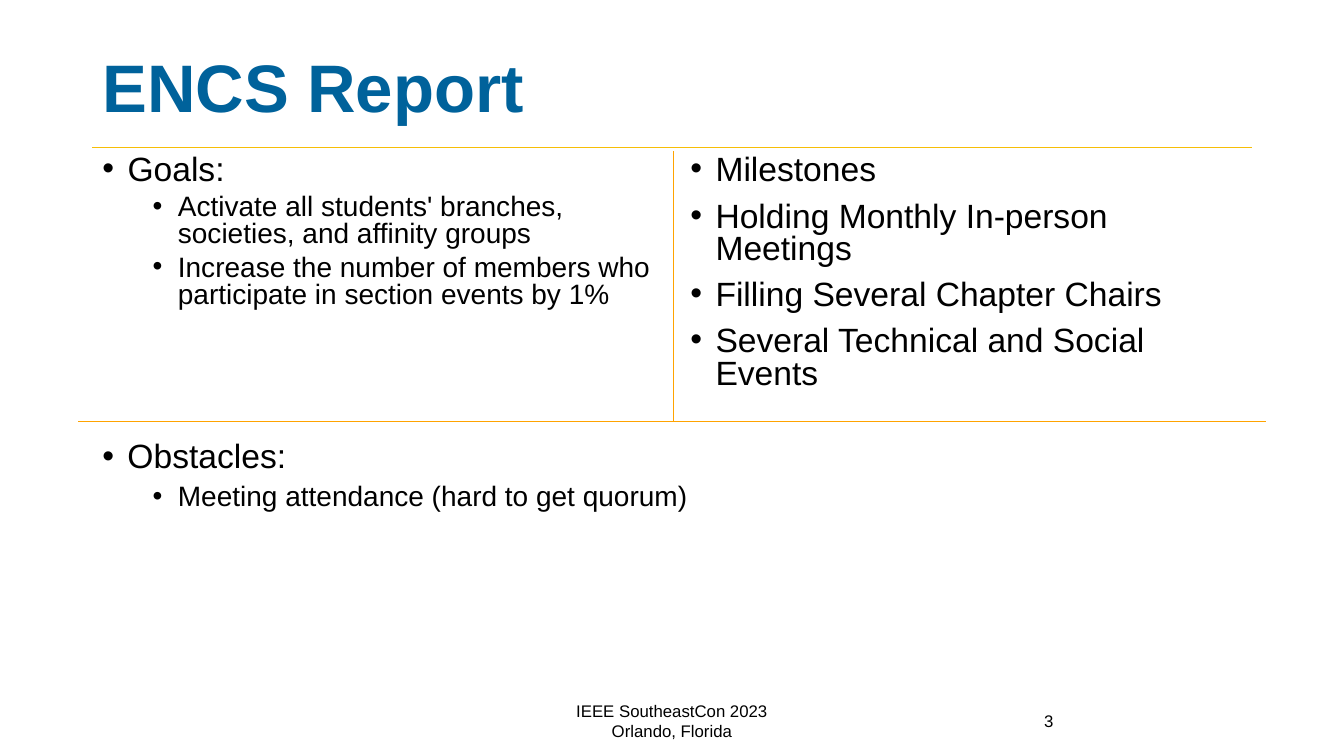
import pptx
import pptx.dml.color
import pptx.enum.shapes
import pptx.enum.text
import pptx.util
import lxml.etree

Pt = pptx.util.Pt
RGBColor = pptx.dml.color.RGBColor
ANCHOR = pptx.enum.text.MSO_ANCHOR
ALIGN = pptx.enum.text.PP_ALIGN
BLUE = RGBColor(0x00, 0x62, 0x9B)
BLACK = RGBColor(0x00, 0x00, 0x00)
YELLOW = RGBColor(0xF6, 0xBE, 0x07)
ORANGE = RGBColor(0xFF, 0xA3, 0x00)
DRAWING = "{http://schemas.openxmlformats.org/drawingml/2006/main}"

LEFT = 66
CONTENT_WIDTH = 828
COLUMN_WIDTH = 408
COLUMN_TOP = 108
FOOTER_TOP = 500.4
DIVIDER_X = 481
DIVIDER_Y = 301

presentation = pptx.Presentation()
presentation.slide_width = Pt(960)
presentation.slide_height = Pt(540)
slide = presentation.slides.add_slide(presentation.slide_layouts[6])


def add_text(left, top, width, height, anchor, lines, size, color=BLACK, bold=False, **layout):
    frame = slide.shapes.add_textbox(Pt(left), Pt(top), Pt(width), Pt(height)).text_frame
    frame.word_wrap = True
    frame.vertical_anchor = anchor
    for index, line in enumerate(lines):
        paragraph = frame.paragraphs[0] if index == 0 else frame.add_paragraph()
        paragraph.text = line
        for name, value in layout.items():
            setattr(paragraph, name, value)
        for name, value in {"name": "Arial", "size": Pt(size), "bold": bold}.items():
            setattr(paragraph.runs[0].font, name, value)
        paragraph.runs[0].font.color.rgb = color
    return frame


def add_bullets(left, top, width, height, spacing, items):
    lines = [text for level, text in items]
    frame = add_text(left, top, width, height, ANCHOR.TOP, lines, 24, line_spacing=spacing)
    for index, (level, text) in enumerate(items):
        paragraph = frame.paragraphs[index]
        paragraph.level = level
        if index:
            paragraph.space_before = Pt(5 if level else 10)
        properties = paragraph._p.get_or_add_pPr()
        properties.set("marL", str(Pt(54 if level else 18)))
        properties.set("indent", str(Pt(-18)))
        lxml.etree.SubElement(properties, DRAWING + "buFont", typeface="Arial")
        lxml.etree.SubElement(properties, DRAWING + "buChar", char="•")
        paragraph.runs[0].font.size = Pt(20 if level else 24)


add_text(LEFT, 28.8, 738.72, 72, ANCHOR.MIDDLE, ["ENCS Report"], 48, BLUE, True, line_spacing=0.9)

add_bullets(LEFT, COLUMN_TOP, COLUMN_WIDTH, 162, 0.8, [
    (0, "Goals:"),
    (1, "Activate all students' branches, societies, and affinity groups"),
    (1, "Increase the number of members who participate in section events by 1%"),
])
add_bullets(LEFT + CONTENT_WIDTH - COLUMN_WIDTH, COLUMN_TOP, COLUMN_WIDTH, 186, 0.8, [
    (0, "Milestones"),
    (0, "Holding Monthly In-person Meetings"),
    (0, "Filling Several Chapter Chairs"),
    (0, "Several Technical and Social Events"),
])
add_bullets(LEFT, 310.3, CONTENT_WIDTH, 162, 0.9, [
    (0, "Obstacles:"),
    (1, "Meeting attendance (hard to get quorum)"),
])

add_text(318, FOOTER_TOP, 324, 28.8, ANCHOR.MIDDLE,
         ["IEEE SoutheastCon 2023", "Orlando, Florida"], 12, alignment=ALIGN.CENTER)
add_text(738.7, FOOTER_TOP, 155.5, 28.8, ANCHOR.MIDDLE, ["3"], 12)

for start_x, start_y, end_x, end_y, color, width in [
    (LEFT, 105, LEFT + CONTENT_WIDTH, 105, YELLOW, 0.5),
    (DIVIDER_X, COLUMN_TOP, DIVIDER_X, DIVIDER_Y, ORANGE, 1),
    (56, DIVIDER_Y, 904, DIVIDER_Y, ORANGE, 1),
]:
    rule = slide.shapes.add_connector(
        pptx.enum.shapes.MSO_CONNECTOR.STRAIGHT, Pt(start_x), Pt(start_y), Pt(end_x), Pt(end_y))
    rule.line.color.rgb = color
    rule.line.width = Pt(width)
    lxml.etree.SubElement(rule._element.spPr, DRAWING + "effectLst")

presentation.save("out.pptx")
